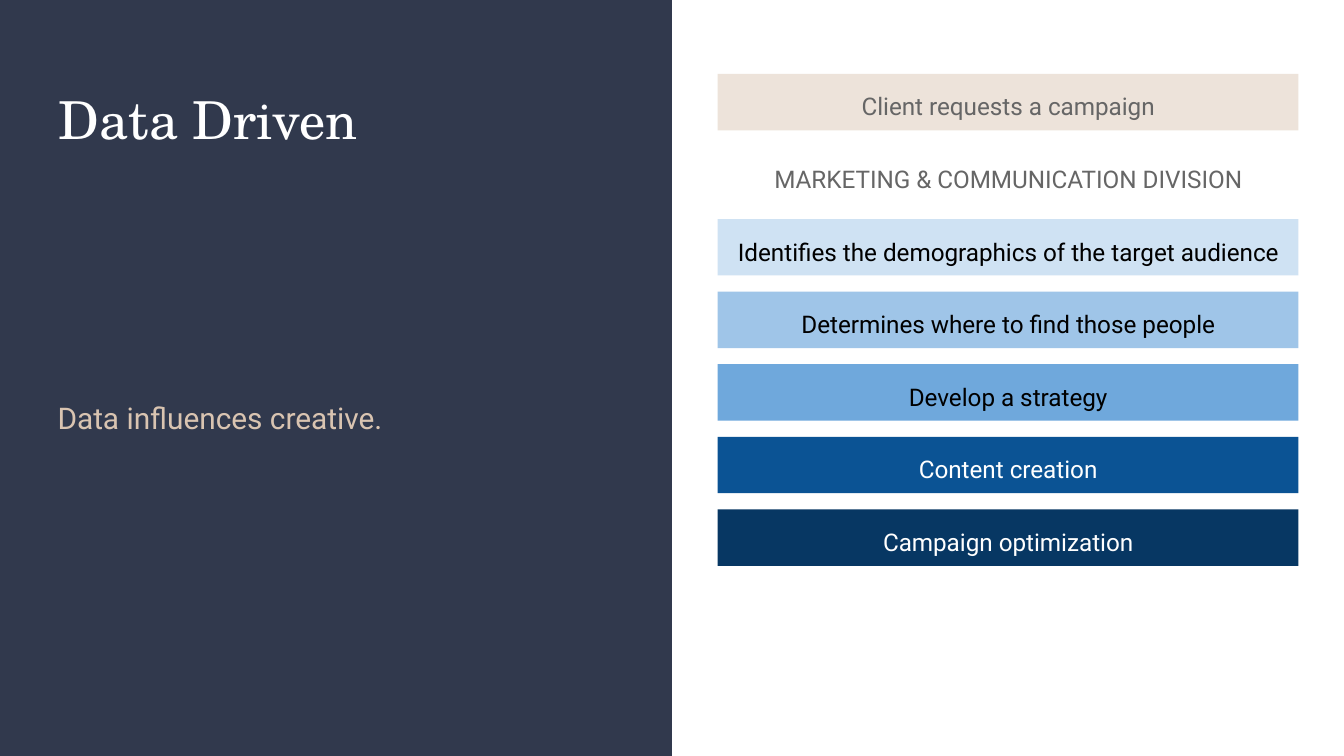
from pptx import Presentation
from pptx.dml.color import RGBColor
from pptx.enum.shapes import MSO_SHAPE as Shape
from pptx.enum.text import MSO_ANCHOR as Anchor, PP_ALIGN as Align
from pptx.util import Inches, Pt

WHITE = RGBColor(0xFF, 0xFF, 0xFF)
BLACK = RGBColor(0x00, 0x00, 0x00)
GREY = RGBColor(0x66, 0x66, 0x66)
NAVY = RGBColor(0x31, 0x39, 0x4D)
SAND = RGBColor(0xD9, 0xC4, 0xB1)
CREAM = RGBColor(0xED, 0xE3, 0xDA)
PALE_BLUE = RGBColor(0xCF, 0xE2, 0xF3)
LIGHT_BLUE = RGBColor(0x9F, 0xC5, 0xE8)
MID_BLUE = RGBColor(0x6F, 0xA8, 0xDC)
DARK_BLUE = RGBColor(0x0B, 0x53, 0x94)
DEEP_BLUE = RGBColor(0x07, 0x37, 0x63)

SERIF, SANS = "TeX Gyre Schola", "Roboto"
PAGE_WIDTH = Inches(10)
PAGE_HEIGHT = PAGE_WIDTH * 9 // 16
STEP_HEIGHT, STEP_PITCH = Inches(0.42), Inches(0.54)

STEPS = [
    ("Client requests a campaign", CREAM, GREY),
    ("MARKETING & COMMUNICATION DIVISION", None, GREY),
    ("Identifies the demographics of the target audience", PALE_BLUE, BLACK),
    ("Determines where to find those people", LIGHT_BLUE, BLACK),
    ("Develop a strategy", MID_BLUE, BLACK),
    ("Content creation", DARK_BLUE, WHITE),
    ("Campaign optimization", DEEP_BLUE, WHITE),
]


def set_values(target, values):
    for name, value in values.items():
        setattr(target, name, value)


def add_bar(page, left, top, width, height, color):
    bar = page.shapes.add_shape(Shape.RECTANGLE, left, top, width, height)
    bar.shadow.inherit = False
    bar.fill.solid()
    bar.fill.fore_color.rgb = color
    bar.line.fill.background()
    return bar


def write_text(box, text, font, size, color, **para_format):
    frame = box.text_frame
    margins = dict.fromkeys(
        ("margin_left", "margin_top", "margin_right", "margin_bottom"), Inches(0.1))
    set_values(frame, {"word_wrap": True, "vertical_anchor": Anchor.TOP, **margins})
    para = frame.paragraphs[0]
    set_values(para, para_format)
    span = para.add_run()
    span.text = text
    set_values(span.font, {"name": font, "size": Pt(size)})
    span.font.color.rgb = color


def add_title_panel(page, left, top, width, height):
    add_bar(page, left, top, width, height, NAVY)
    text_width = Inches(4.05)
    title = page.shapes.add_textbox(
        left + Inches(0.34), top + Inches(0.55), text_width, Inches(2.24))
    write_text(title, "Data Driven", SERIF, 28, WHITE)
    subtitle = page.shapes.add_textbox(
        left + Inches(0.33), top + Inches(2.87), text_width, Inches(1.01))
    write_text(subtitle, "Data influences creative.", SANS, 16, SAND)


def add_steps(page, left, top, width):
    """Stack the steps at an equal pitch; a step without a fill is a heading."""
    for index, (text, fill, color) in enumerate(STEPS):
        place = (left, top + index * STEP_PITCH, width, STEP_HEIGHT)
        box = add_bar(page, *place, fill) if fill else page.shapes.add_textbox(*place)
        write_text(box, text, SANS, 13, color, alignment=Align.CENTER,
                   line_spacing=1.15, space_after=Pt(16))


def main():
    deck = Presentation()
    set_values(deck, {"slide_width": PAGE_WIDTH, "slide_height": PAGE_HEIGHT})
    page = deck.slides.add_slide(deck.slide_layouts[6])
    add_title_panel(page, 0, 0, PAGE_WIDTH // 2, PAGE_HEIGHT)
    add_steps(page, Inches(5.34), Inches(0.55), Inches(4.32))
    deck.save("out.pptx")


if __name__ == "__main__":
    main()
